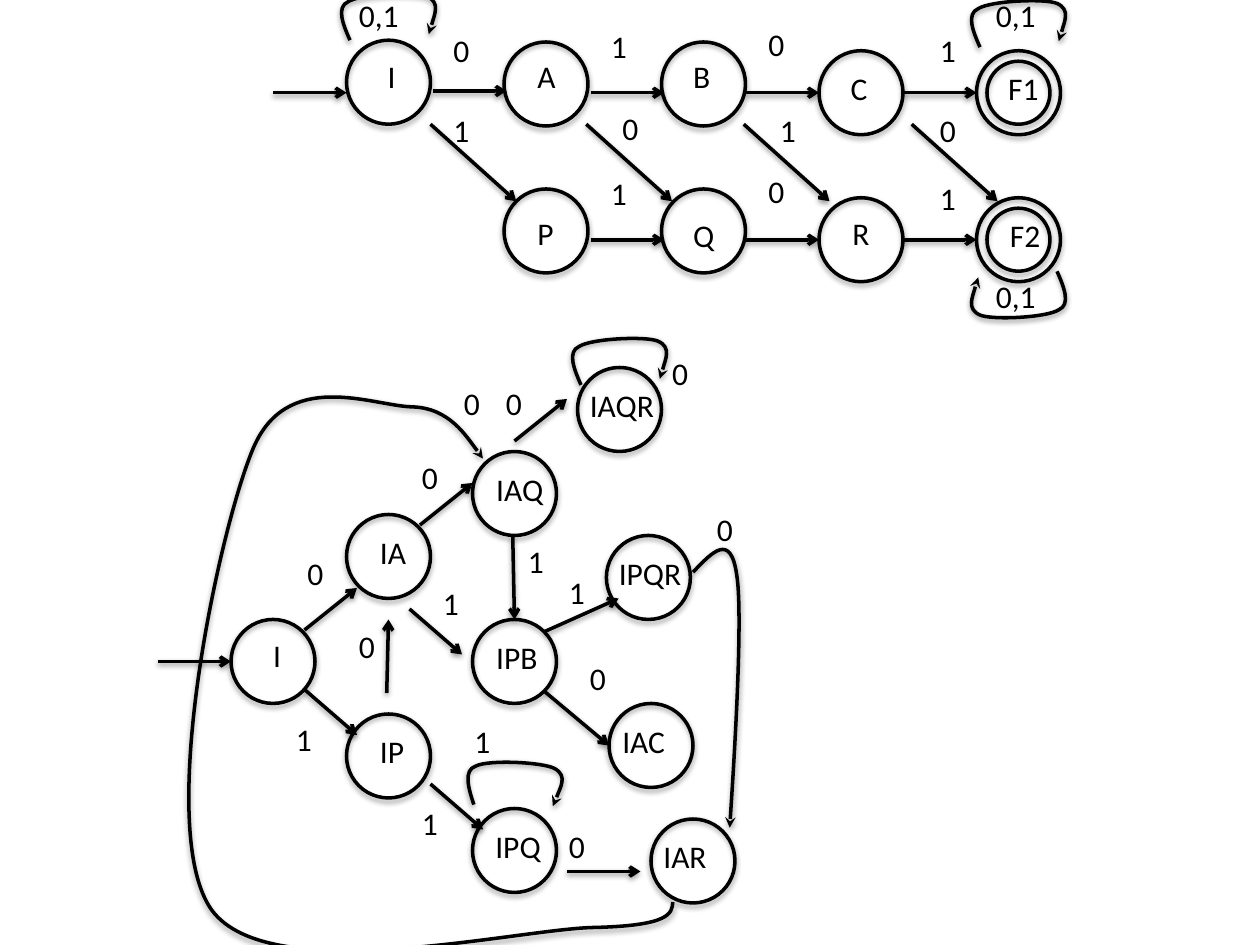
import pptx
import pptx.dml.color
import pptx.enum.shapes
import pptx.enum.text
import pptx.oxml
import pptx.oxml.ns
import pptx.util

Pt = pptx.util.Pt
qn = pptx.oxml.ns.qn
COLORS = {"ink": "000000", "paper": "FFFFFF"}
INK = pptx.dml.color.RGBColor.from_string(COLORS["ink"])
OVAL = pptx.enum.shapes.MSO_SHAPE.OVAL
STRAIGHT = pptx.enum.shapes.MSO_CONNECTOR.STRAIGHT
FRAME_FORMAT = {"word_wrap": False, "auto_size": pptx.enum.text.MSO_AUTO_SIZE.SHAPE_TO_FIT_TEXT}
FONT_FORMAT = {"name": "Calibri", "size": Pt(18)}
DIAMETER = 48
RING_GAP = 6
ACCEPTING = ("F1", "F2")


def style_outline(shape, distance, opacity, arrowhead=None):
    shape.line.color.rgb = INK
    shape.line.width = Pt(2)
    properties = shape.element.spPr
    if arrowhead:
        tail = pptx.oxml.parse_xml(f'<a:tailEnd {pptx.oxml.ns.nsdecls("a")} type="{arrowhead}"/>')
        properties.find(qn("a:ln")).append(tail)
    properties.append(pptx.oxml.parse_xml(
        f'<a:effectLst {pptx.oxml.ns.nsdecls("a")}>'
        f'<a:outerShdw blurRad="{Pt(3.1)}" dist="{Pt(distance)}" dir="5400000" rotWithShape="0">'
        f'<a:srgbClr val="{COLORS["ink"]}"><a:alpha val="{opacity * 1000}"/></a:srgbClr>'
        '</a:outerShdw></a:effectLst>'))


def add_label(text, left, top, width):
    frame = slide.shapes.add_textbox(Pt(left), Pt(top), Pt(width), Pt(29)).text_frame
    for name, value in FRAME_FORMAT.items():
        setattr(frame, name, value)
    run = frame.paragraphs[0].add_run()
    run.text = text
    for name, value in FONT_FORMAT.items():
        setattr(run.font, name, value)
    run.font.color.rgb = INK


presentation = pptx.Presentation()
presentation.slide_width = Pt(720)
presentation.slide_height = Pt(540)
slide = presentation.slides.add_slide(presentation.slide_layouts[6])
slide.background.fill.solid()
slide.background.fill.fore_color.rgb = pptx.dml.color.RGBColor.from_string(COLORS["paper"])

states = [
    ("I", 198, 23, 214.5, 29, 19.5),
    ("A", 288, 24, 300, 29, 25),
    ("B", 378, 24, 389, 29, 24.5),
    ("C", 468, 29, 479, 36, 24.5),
    ("F1", 558, 29, 569, 36, 32.5),
    ("P", 288, 108, 300, 119, 24),
    ("Q", 378, 108, 389, 120, 26.5),
    ("R", 468, 113, 480, 119, 24.5),
    ("F2", 558, 113, 570, 120, 32.5),
    ("I", 132, 354, 149, 360, 19.5),
    ("IA", 198, 294, 210, 301, 29.5),
    ("IP", 198, 408, 210, 415, 29),
    ("IAQ", 270, 258, 276.5, 265, 42),
    ("IPB", 270, 354, 276.5, 361, 39),
    ("IPQ", 270, 462, 276, 469, 41),
    ("IAQR", 330, 210, 330, 217, 52),
    ("IPQR", 346.5, 306, 346.5, 313, 51),
    ("IAC", 348, 402, 348.5, 409, 39.5),
    ("IAR", 372, 468, 372, 475, 39.5),
]
for name, left, top, label_left, label_top, label_width in states:
    accepting = name in ACCEPTING
    container = slide.shapes.add_group_shape() if accepting else slide
    for inset in (0, RING_GAP) if accepting else (0,):
        size = DIAMETER - 2 * inset
        circle = container.shapes.add_shape(
            OVAL, Pt(left + inset), Pt(top + inset), Pt(size), Pt(size))
        circle.fill.background()
        style_outline(circle, 1.8, 35)
    add_label(name, label_left, label_top, label_width)

arrows = [(x, 53, x + 42, 53) for x in (156, 337.5, 426, 516)]
arrows += [(x, 137, x + 42, 137) for x in (337.5, 426, 516)]
arrows += [(x, 71, x + 49, 115) for x in (246, 335, 425, 521)]
arrows += [
    (247.5, 52, 289.5, 52),
    (90, 378, 132, 378),
    (174, 394, 204, 420),
    (174, 360, 204, 336),
    (234, 348, 264, 374),
    (240, 300, 270, 276),
    (221, 396, 222, 354),
    (294, 252, 324, 228),
    (246, 448, 276, 474),
    (293, 306, 294, 354),
    (311, 395, 348, 426),
    (311, 361, 353.5, 342),
    (324, 498, 366, 498),
]
for arrow in arrows:
    connector = slide.shapes.add_connector(STRAIGHT, *[Pt(value) for value in arrow])
    style_outline(connector, 1.6, 38, "arrow")

loop = [(8, 28), (4, 19), (0, 9), (7, 6), (14, 1.5), (45, 0), (52, 3),
        (60, 6.5), (53, 24.5), (53, 24.5)]
loop_places = [(192, -5, 0), (552, -1, 0), (552, 155, 180), (324, 192, 0), (264, 434, 5.6)]
curves = [([(left + x, top + y) for x, y in loop], rotation)
          for left, top, rotation in loop_places]
curves += [
    ([(384.5, 515.5), (384, 522), (383, 529), (339, 530), (295, 531), (154, 565),
      (121, 520), (88.5, 474.5), (124.5, 306), (144, 258), (163, 209.5), (213, 232),
      (235.5, 232.5), (257, 233), (276, 262), (276, 262)], 0),
    ([(396, 327), (407, 315.5), (417.5, 304), (421, 328.5), (425, 353),
      (417, 473), (417, 473)], 0),
]
for points, rotation in curves:
    vertices = [(Pt(x), Pt(y)) for x, y in points]
    builder = slide.shapes.build_freeform(*vertices[0])
    builder.add_line_segments(vertices[1:], close=False)
    curve = builder.convert_to_shape()
    curve.rotation = rotation
    curve.fill.background()
    outline = next(curve.element.iter(qn("a:path")))
    segments = outline.findall(qn("a:lnTo"))
    for start in range(0, len(segments), 3):
        bezier = pptx.oxml.parse_xml(f'<a:cubicBezTo {pptx.oxml.ns.nsdecls("a")}/>')
        for segment in segments[start:start + 3]:
            bezier.append(segment[0])
            outline.remove(segment)
        outline.append(bezier)
    style_outline(curve, 1.6, 38, "stealth")

symbols = {
    "0": (24, [(252, 14), (432, 11), (432, 95), (348.5, 59), (530, 60), (168.5, 313),
               (234, 258), (258, 216), (282, 216), (198, 355), (377, 199), (330, 373),
               (318, 469), (402.5, 288)]),
    "1": (24, [(342, 12), (530, 14), (342, 96), (530, 99), (252, 60), (438.5, 60),
               (162, 408), (234, 456), (246, 330), (294.5, 306), (318, 324), (264, 409)]),
    "0,1": (37.5, [(198, -6), (562, -6), (562, 155)]),
}
for symbol, (width, places) in symbols.items():
    for left, top in places:
        add_label(symbol, left, top, width)

presentation.save("out.pptx")
